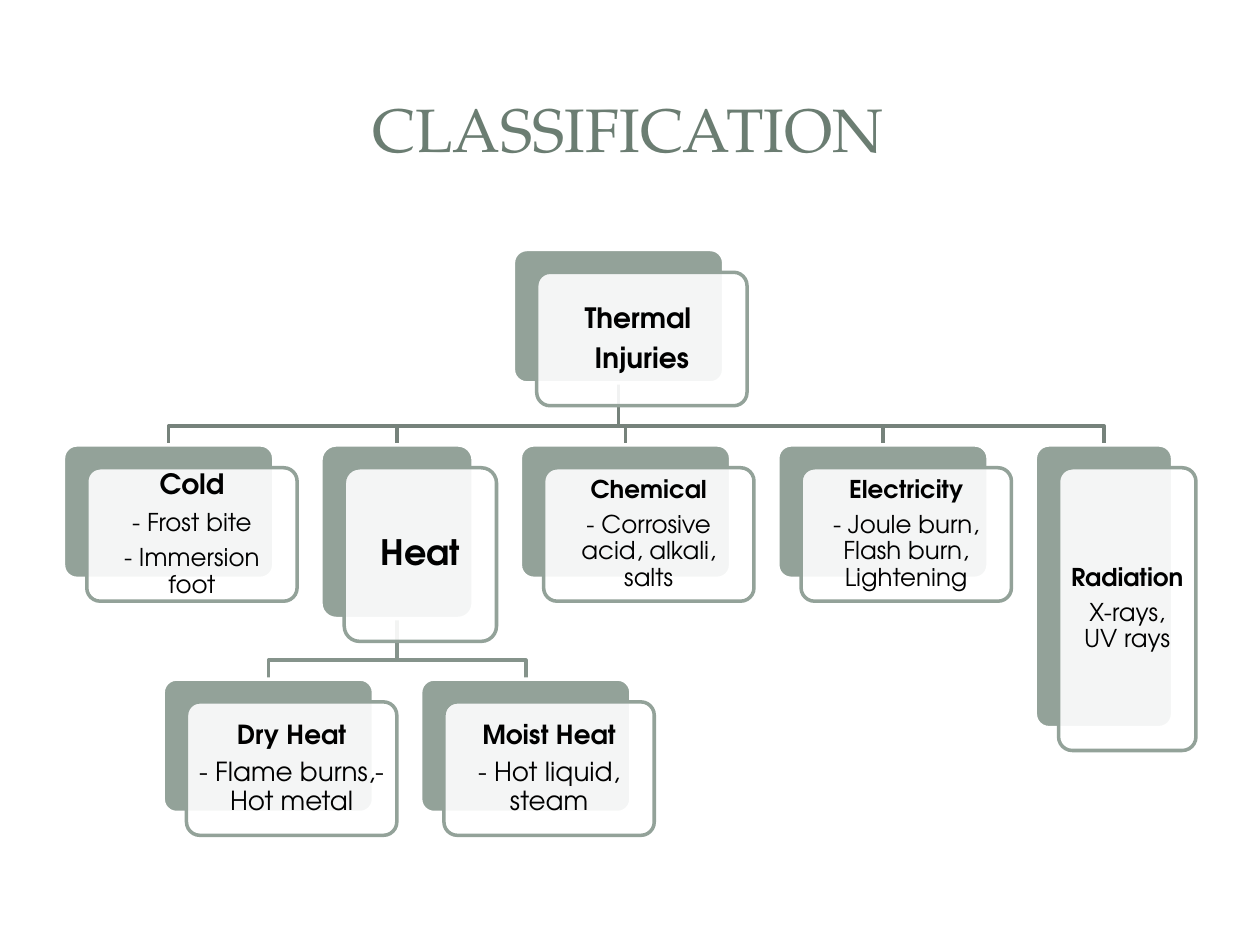
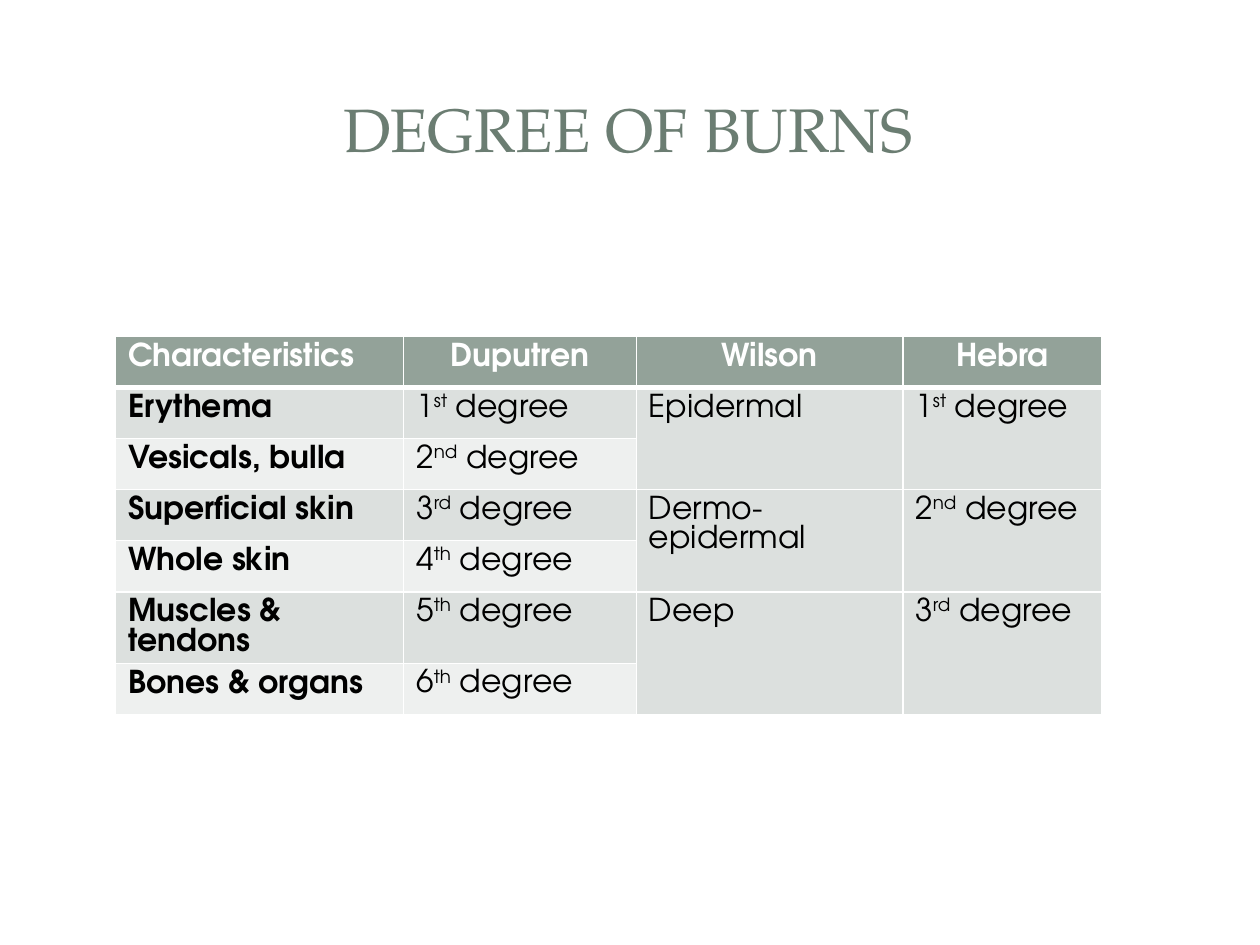
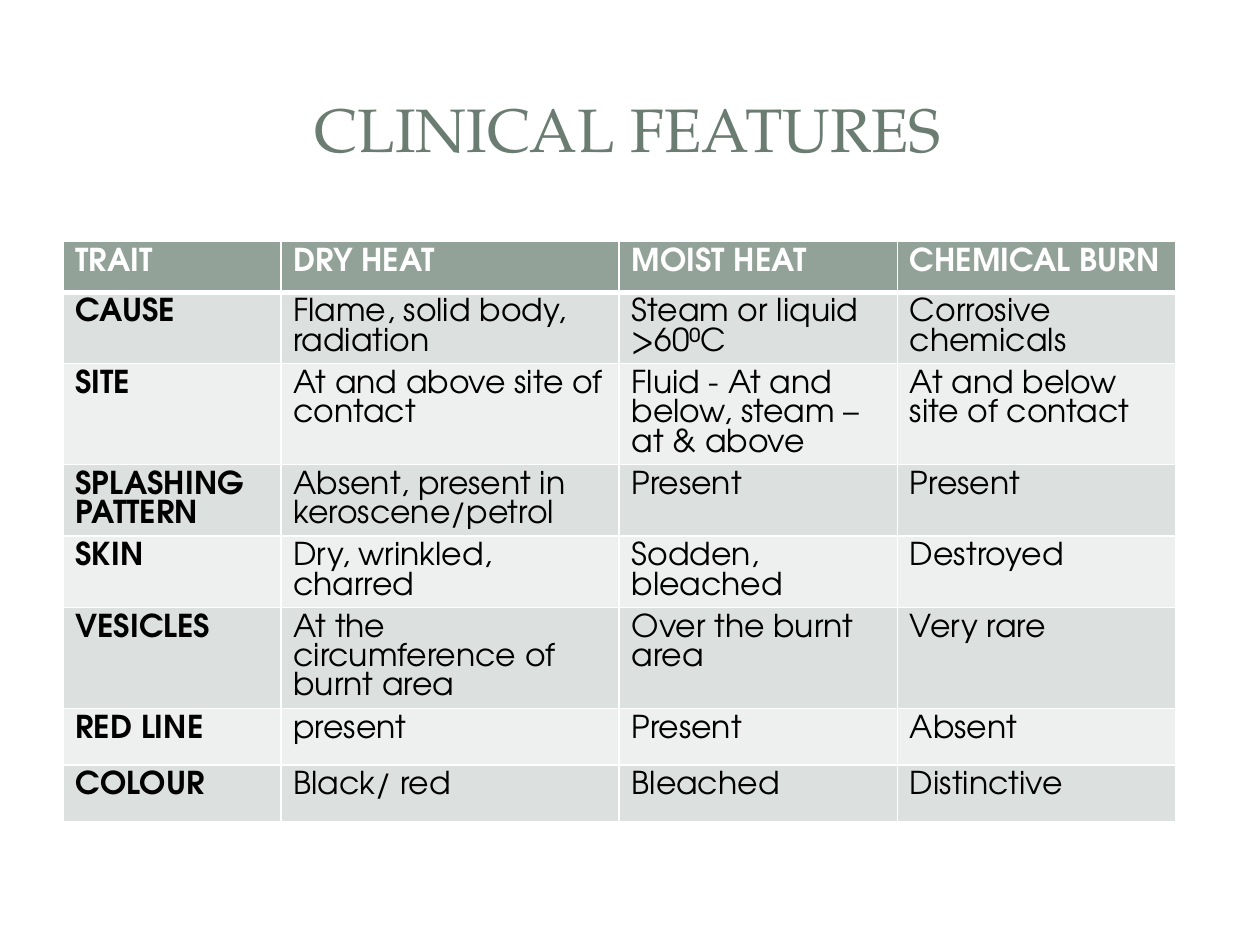
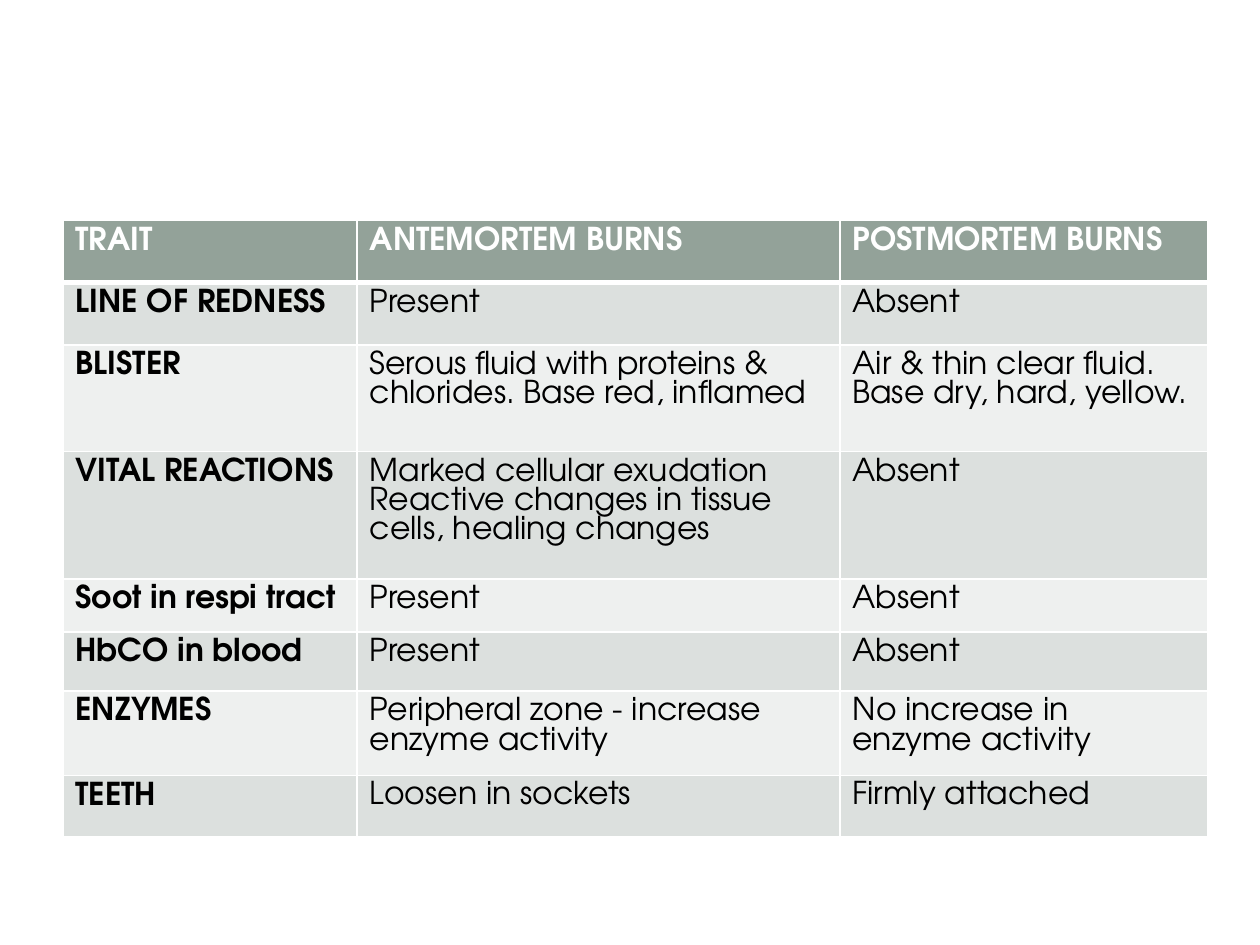
from lxml import etree
from pptx import Presentation
from pptx.dml.color import RGBColor
from pptx.enum.shapes import MSO_SHAPE
from pptx.enum.text import MSO_ANCHOR, PP_ALIGN
from pptx.oxml.ns import qn
from pptx.util import Cm, Pt

ROUNDED, RECTANGLE = MSO_SHAPE.ROUNDED_RECTANGLE, MSO_SHAPE.RECTANGLE
MIDDLE = MSO_ANCHOR.MIDDLE
CENTER, LEFT = PP_ALIGN.CENTER, PP_ALIGN.LEFT

SAGE, TITLE_GREEN = "93A299", "6B7D72"
TRUNK, BRANCH = "76827B", "85938B"
BAND_DARK, BAND_LIGHT = "DCE0DE", "EEF0EF"
WHITE, BLACK = "FFFFFF", "000000"
TITLE_FONT, BODY_FONT = "TeX Gyre Pagella", "TeX Gyre Adventor"

# Organisation chart measures, in centimetres
BOX_WIDTH, BOX_HEIGHT = 4.24, 2.69
BOX_GAP, BUS_RISE = 0.95, 0.38
SHIFT_RIGHT, SHIFT_DOWN = 0.47, 0.46


def color(hex_text):
    return RGBColor.from_string(hex_text)


def apply_format(target, values):
    for name, value in values.items():
        setattr(target, name, value)


class Node:
    """A box of the chart: heading lines, detail lines, and where its back plate lies."""

    def __init__(self, heads, details, head_size, body_size=None,
                 width=BOX_WIDTH, height=BOX_HEIGHT):
        self.heads, self.details = heads, details
        self.head_size = head_size
        self.body_size = body_size or head_size
        self.width, self.height = width, height
        self.left = self.top = 0

    @property
    def middle(self):
        return self.left + self.width / 2


def place_row(nodes, left, top):
    for node in nodes:
        node.left, node.top = left, top
        left += node.width + BOX_GAP


class Deck:
    def __init__(self):
        self.deck = Presentation()
        self.deck.slide_width = Cm(25.4)
        self.deck.slide_height = Cm(19.05)
        self.page = None

    def new_page(self, title=None):
        self.page = self.deck.slides.add_slide(self.deck.slide_layouts[6])
        self.plate(0.25, 0.28, 24.89, 18.52, WHITE, corner=0.02)
        self.plate(0.76, 0.76, 23.88, 3.68, WHITE, opacity=83)
        self.plate(1.04, 1.04, 23.29, 3.1, WHITE)
        if title:
            self.title(title)

    def title(self, text):
        box = self.page.shapes.add_textbox(Cm(1.19), Cm(1.14), Cm(22.94), Cm(2.9))
        apply_format(box.text_frame, {"word_wrap": True, "vertical_anchor": MIDDLE})
        para = box.text_frame.paragraphs[0]
        para.alignment = CENTER
        self.span(para, text, 35, TITLE_GREEN, font=TITLE_FONT)

    def span(self, para, text, size, ink=BLACK, bold=False, font=BODY_FONT):
        span = para.add_run()
        span.text = text
        apply_format(span.font, {"name": font, "size": Pt(size), "bold": bold})
        span.font.color.rgb = color(ink)
        return span

    def plate(self, left, top, width, height, fill, line=None, corner=0, opacity=100):
        """Draw a filled box, rounded when a corner ratio is given."""
        box = self.page.shapes.add_shape(
            ROUNDED if corner else RECTANGLE,
            Cm(left), Cm(top), Cm(width), Cm(height))
        if corner:
            box.adjustments[0] = corner
        box.shadow.inherit = False
        box.fill.solid()
        box.fill.fore_color.rgb = color(fill)
        if opacity < 100:
            tint = box.fill._xPr.find(qn("a:solidFill"))[0]
            etree.SubElement(tint, qn("a:alpha"), val=str(opacity * 1000))
        if line:
            box.line.color.rgb = color(line)
            box.line.width = Pt(2)
        else:
            box.line.fill.background()
        return box

    def node(self, node):
        """Draw a back plate and a nearly opaque front plate that holds the text."""
        self.plate(node.left, node.top, node.width, node.height,
                   SAGE, WHITE, corner=0.1)
        front = self.plate(node.left + SHIFT_RIGHT, node.top + SHIFT_DOWN,
                           node.width, node.height, WHITE, SAGE,
                           corner=0.1, opacity=90)
        frame = front.text_frame
        inset = Cm(node.head_size * 0.011)
        apply_format(frame, {
            "word_wrap": True, "vertical_anchor": MIDDLE,
            "margin_left": inset, "margin_right": inset,
            "margin_top": inset, "margin_bottom": inset})
        for index, text in enumerate(node.heads + node.details):
            para = frame.add_paragraph() if index else frame.paragraphs[0]
            is_head = index < len(node.heads)
            size = node.head_size if is_head else node.body_size
            apply_format(para, {"alignment": CENTER, "line_spacing": 0.9,
                                "space_after": Pt(size * 0.35)})
            self.span(para, text, size, bold=is_head)

    def branch(self, parent, child, ink):
        """Draw the stepped line from a parent's back plate to a child's."""
        bus = child.top - BUS_RISE
        points = [(Cm(x), Cm(y)) for x, y in (
            (parent.middle, parent.top + parent.height), (parent.middle, bus),
            (child.middle, bus), (child.middle, child.top))]
        builder = self.page.shapes.build_freeform(*points[0])
        builder.add_line_segments(points[1:], close=False)
        line = builder.convert_to_shape()
        line.shadow.inherit = False
        line.fill.background()
        line.line.color.rgb = color(ink)
        line.line.width = Pt(2)

    def borders(self, cell, bottom):
        properties = cell._tc.get_or_add_tcPr()
        for side, points in (("L", 1), ("R", 1), ("T", 1), ("B", bottom)):
            edge = etree.SubElement(properties, qn("a:ln" + side), w=str(Pt(points)))
            fill = etree.SubElement(edge, qn("a:solidFill"))
            etree.SubElement(fill, qn("a:srgbClr"), val=WHITE)

    def cell_text(self, cell, text, ink, bold, alignment):
        """Write a cell: a line break starts a paragraph, ^marks^ are superscript."""
        frame = cell.text_frame
        for index, line in enumerate(text.split("\n")):
            para = frame.add_paragraph() if index else frame.paragraphs[0]
            apply_format(para, {"alignment": alignment, "line_spacing": Pt(16.8)})
            for part, words in enumerate(line.split("^")):
                span = self.span(para, words, 18, ink, bold)
                if part % 2:
                    span.font._element.set("baseline", "30000")

    def table(self, left, top, widths, heights, rows, header_alignment=LEFT):
        """Draw a banded table; None in a row joins the cell to the one above."""
        table = self.page.shapes.add_table(
            len(rows), len(widths), Cm(left), Cm(top),
            Cm(sum(widths)), Cm(sum(heights))).table
        for column, width in zip(table.columns, widths):
            column.width = Cm(width)
        for row, height in zip(table.rows, heights):
            row.height = Cm(height)
        for r, row in enumerate(rows):
            is_header = r == 0
            band = SAGE if is_header else BAND_DARK if r % 2 else BAND_LIGHT
            for c, text in enumerate(row):
                cell = table.cell(r, c)
                self.borders(cell, 3 if is_header else 1)
                cell.fill.solid()
                cell.fill.fore_color.rgb = color(band)
                if text is None:
                    table.cell(r - 1, c).merge(cell)
                    continue
                self.cell_text(cell, text, WHITE if is_header else BLACK,
                               is_header or c == 0,
                               header_alignment if is_header and c else LEFT)


def classification(deck):
    deck.new_page("CLASSIFICATION")
    root = Node(["Thermal ", "Injuries"], [], 16)
    heat = Node(["Heat"], [], 20, width=3.07, height=3.5)
    causes = [
        Node(["Cold"], ["- Frost bite", "- Immersion foot"], 16, 14),
        heat,
        Node(["Chemical"], ["- Corrosive acid, alkali, salts"], 14),
        Node(["Electricity"], ["- Joule burn, Flash burn, Lightening"], 14),
        Node(["Radiation"], ["X-rays, UV rays"], 14, width=2.77, height=5.7),
    ]
    heats = [
        Node(["Dry Heat"], ["- Flame burns,- Hot metal"], 15),
        Node(["Moist Heat"], ["- Hot liquid, steam"], 15),
    ]
    place_row([root], 10.35, 5.03)
    place_row(causes, 1.28, 8.97)
    place_row(heats, 3.29, 13.69)
    for cause in causes:
        deck.branch(root, cause, TRUNK)
    for kind in heats:
        deck.branch(heat, kind, BRANCH)
    for node in [root, *causes, *heats]:
        deck.node(node)


def degrees(deck):
    deck.new_page("DEGREE OF BURNS")
    deck.table(2.33, 6.78, [5.81, 4.69, 5.37, 4.02], [1.03] * 7, [
        ["Characteristics", "Duputren", "Wilson", "Hebra"],
        ["Erythema", "1^st^ degree", "Epidermal", "1^st^ degree"],
        ["Vesicals, bulla", "2^nd^ degree", None, None],
        ["Superficial skin", "3^rd^ degree", "Dermo-epidermal", "2^nd^ degree"],
        ["Whole skin", "4^th^ degree", None, None],
        ["Muscles & tendons", "5^th^ degree", "Deep", "3^rd^ degree"],
        ["Bones & organs", "6^th^ degree", None, None],
    ], header_alignment=CENTER)


def clinical_features(deck):
    deck.new_page("CLINICAL FEATURES")
    deck.table(1.27, 4.87, [4.39, 6.82, 5.61, 5.61], [1.02] + [1.14] * 7, [
        ["TRAIT", "DRY HEAT", "MOIST HEAT", "CHEMICAL BURN"],
        ["CAUSE", "Flame, solid body, radiation", "Steam or liquid >60⁰C",
         "Corrosive chemicals"],
        ["SITE", "At and above site of contact",
         "Fluid - At and below, steam – at & above", "At and below site of contact"],
        ["SPLASHING PATTERN", "Absent, present in\nkeroscene/petrol",
         "Present", "Present"],
        ["SKIN", "Dry, wrinkled, charred", "Sodden, bleached", "Destroyed"],
        ["VESICLES", "At the circumference of burnt area",
         "Over the burnt area", "Very rare"],
        ["RED LINE", "present", "Present", "Absent"],
        ["COLOUR", "Black/ red", "Bleached", "Distinctive"],
    ])


def burns_before_and_after_death(deck):
    deck.new_page()
    heights = [1.25, 1.25, 2.15, 2.57, 1.07, 1.19, 1.7, 1.24]
    deck.table(1.27, 4.45, [5.93, 9.73, 7.41], heights, [
        ["TRAIT", "ANTEMORTEM BURNS", "POSTMORTEM BURNS"],
        ["LINE OF REDNESS", "Present", "Absent"],
        ["BLISTER", "Serous fluid with proteins & chlorides. Base red, inflamed",
         "Air & thin clear fluid. Base dry, hard, yellow."],
        ["VITAL REACTIONS",
         "Marked cellular exudation\nReactive changes in tissue cells, healing changes",
         "Absent"],
        ["Soot in respi tract", "Present", "Absent"],
        ["HbCO in blood", "Present", "Absent"],
        ["ENZYMES", "Peripheral zone - increase enzyme activity",
         "No increase in enzyme activity"],
        ["TEETH", "Loosen in sockets", "Firmly attached"],
    ])


def main():
    deck = Deck()
    classification(deck)
    degrees(deck)
    clinical_features(deck)
    burns_before_and_after_death(deck)
    deck.deck.save("out.pptx")


if __name__ == "__main__":
    main()
